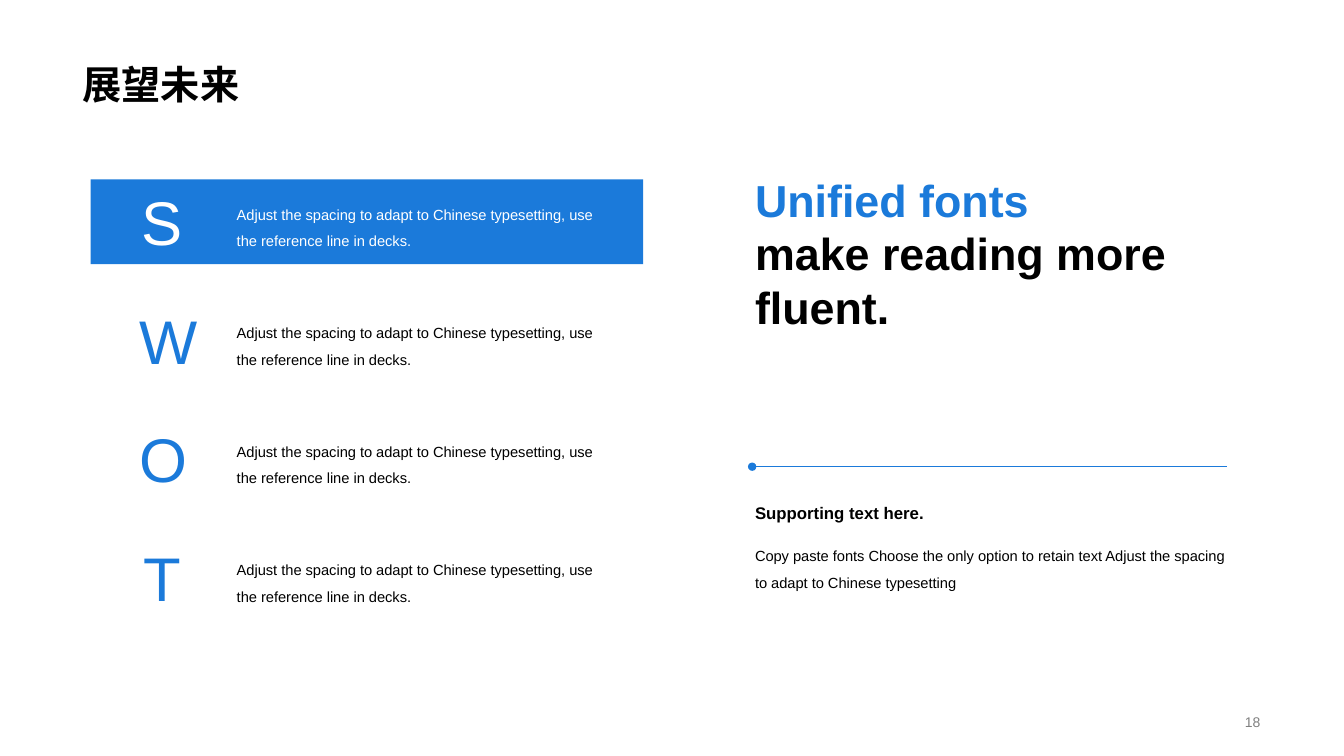
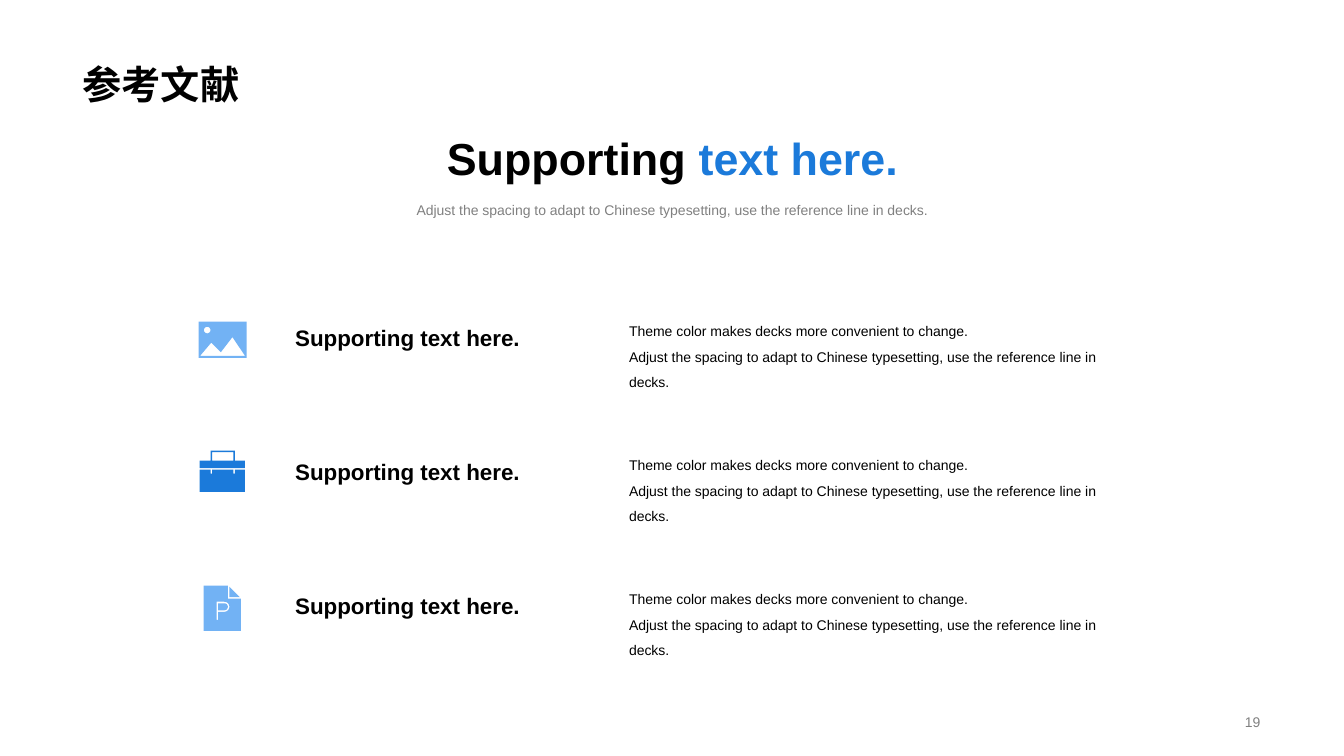
"""Build the outlook and references slides on a grid of tenths of an inch."""

from math import cos, pi, sin

from lxml.etree import SubElement
from pptx import Presentation
from pptx.dml.color import RGBColor
from pptx.enum.shapes import MSO_CONNECTOR, MSO_SHAPE
from pptx.enum.text import MSO_ANCHOR, MSO_AUTO_SIZE, PP_ALIGN
from pptx.oxml.ns import qn
from pptx.util import Inches, Pt

BLUE = RGBColor(0x1B, 0x7A, 0xDA)
SKY = RGBColor(0x72, 0xB2, 0xF4)
BLACK = RGBColor(0x00, 0x00, 0x00)
WHITE = RGBColor(0xFF, 0xFF, 0xFF)
GREY = RGBColor(0x80, 0x80, 0x80)

FONT = "Arial"
GRID = Inches(0.1)
ICON_STEPS = 10

SPACING_TIP = "Adjust the spacing to adapt to Chinese typesetting, use the reference line in decks."
SUPPORT = "Supporting text here."


def cells(*lengths):
    return [round(length * GRID) for length in lengths]


def write(frame, paragraphs, size=10.5, color=BLACK, bold=False,
          align=PP_ALIGN.LEFT, spacing=1.0, anchor=MSO_ANCHOR.TOP):
    frame.word_wrap = True
    frame.auto_size = MSO_AUTO_SIZE.NONE
    frame.vertical_anchor = anchor
    for index, spans in enumerate(paragraphs):
        para = frame.add_paragraph() if index else frame.paragraphs[0]
        para.alignment = align
        para.line_spacing = spacing
        for text, tint in [(spans, color)] if isinstance(spans, str) else spans:
            span = para.add_run()
            span.text = text
            span.font.name = FONT
            span.font.size = Pt(size)
            span.font.bold = bold
            span.font.color.rgb = tint


def arc(x, y, radius, start, end, steps=16):
    angles = [start + (end - start) * step / steps for step in range(steps + 1)]
    return [(x + radius * cos(angle), y + radius * sin(angle)) for angle in angles]


def rectangle(left, top, right, bottom):
    return [(left, top), (right, top), (right, bottom), (left, bottom)]


class Page:
    def __init__(self, deck, title, number):
        self.slide = deck.slides.add_slide(deck.slide_layouts[5])
        self.shapes = self.slide.shapes
        box = self.shapes.title
        box.left, box.top, box.width, box.height = cells(7.2, 0, 118.8, 11.2)
        write(box.text_frame, [title], size=28, bold=True, spacing=0.9,
              anchor=MSO_ANCHOR.BOTTOM)
        self.text(96.9, 70.4, 29.1, 2.4, str(number), size=10, color=GREY,
                  align=PP_ALIGN.RIGHT, anchor=MSO_ANCHOR.MIDDLE)

    def text(self, left, top, width, height, *paragraphs, **style):
        box = self.shapes.add_textbox(*cells(left, top, width, height))
        write(box.text_frame, paragraphs, **style)

    def band(self, left, top, width, height, color):
        box = self.shapes.add_shape(MSO_SHAPE.RECTANGLE, *cells(left, top, width, height))
        self.paint(box, color)

    def rule(self, left, right, top, color):
        line = self.shapes.add_connector(MSO_CONNECTOR.STRAIGHT, *cells(left, top, right, top))
        line.line.color.rgb = color
        line.line.width = Pt(1)
        SubElement(line.line._get_or_add_ln(), qn("a:headEnd"), type="oval")
        SubElement(line._element.spPr, qn("a:effectLst"))

    def icon(self, left, top, color, outlines):
        scaled = [[(x * ICON_STEPS, y * ICON_STEPS) for x, y in outline] for outline in outlines]
        builder = self.shapes.build_freeform(*scaled[0][0], scale=GRID / 10 / ICON_STEPS)
        builder.add_line_segments(scaled[0][1:], close=True)
        for outline in scaled[1:]:
            builder.move_to(*outline[0])
            builder.add_line_segments(outline[1:], close=True)
        self.paint(builder.convert_to_shape(*cells(left, top)), color)

    def paint(self, shape, color):
        shape.shadow.inherit = False
        shape.fill.solid()
        shape.fill.fore_color.rgb = color
        shape.line.fill.background()


PHOTO = [
    rectangle(0, 0, 47.5, 36),
    [(33.5, 15.5), (22, 30.5), (12.5, 21), (1.5, 34), (46, 34)],
    arc(8.5, 8.5, 3.3, 0, 2 * pi),
]
BRIEFCASE = [
    [(0, 19), (11, 19), (11, 23), (12.5, 23), (12.5, 19), (33.5, 19),
     (33.5, 23), (35, 23), (35, 19), (45, 19), (45, 41), (0, 41)],
    [(35, 0), (35, 10), (45, 10), (45, 17.5), (0, 17.5), (0, 10), (11, 10), (11, 0)],
    rectangle(12.5, 1.5, 33.5, 10),
]
DOCUMENT = [
    [(0, 0), (24, 0), (24, 13), (37, 13), (37, 45), (0, 45)],
    [(14.5, 34), (13, 34), (13, 16)] + arc(20.5, 21, 5, -pi / 2, pi / 2) + [(14.5, 26)],
    [(14.5, 24.5), (14.5, 17.5)] + arc(20.5, 21, 3.5, -pi / 2, pi / 2),
    [(36, 11.5), (25.5, 11.5), (25.5, 1)],
]


def add_outlook(deck):
    page = Page(deck, "展望未来", 18)
    page.band(9, 17.8, 54.8, 8.4, BLUE)
    for row, letter in enumerate("SWOT"):
        top = 17.8 + 11.75 * row
        page.text(12.9, top, 6.4, 8.4, letter, size=44, align=PP_ALIGN.CENTER,
                  color=BLUE if row else WHITE)
        page.text(22.5, top + 1.25, 39.3, 6, SPACING_TIP, spacing=1.5,
                  color=BLACK if row else WHITE)
    page.text(73.9, 16.6, 49.6, 17.2, [("Unified fonts", BLUE)],
              "make reading more fluent.", size=32, bold=True)
    page.rule(74.6, 121.7, 46.3, BLUE)
    page.text(73.9, 49.4, 23.2, 3, SUPPORT, size=12, bold=True)
    page.text(73.9, 52.9, 49.6, 6,
              "Copy paste fonts Choose the only option to retain text "
              "Adjust the spacing to adapt to Chinese typesetting", spacing=1.5)


def add_references(deck):
    page = Page(deck, "参考文献", 19)
    page.text(7.3, 12.5, 118.8, 6.4, [("Supporting ", BLACK), ("text here.", BLUE)],
              size=32, bold=True, align=PP_ALIGN.CENTER)
    page.text(7.2, 19, 118.9, 2.7, SPACING_TIP, size=10, color=GREY,
              align=PP_ALIGN.CENTER, spacing=1.3)
    icons = [(19.7, 31.9, SKY, PHOTO), (19.8, 44.7, BLUE, BRIEFCASE), (20.2, 58.1, SKY, DOCUMENT)]
    for row, icon in enumerate(icons):
        top = 30.7 + 13.3 * row
        page.icon(*icon)
        page.text(28.3, top + 1, 26, 3.7, SUPPORT, size=16, bold=True)
        page.text(61.4, top, 52.1, 5.7, "Theme color makes decks more convenient to change.",
                  SPACING_TIP, size=10, spacing=1.5)


def main():
    deck = Presentation()
    deck.slide_width, deck.slide_height = Inches(13.33), Inches(7.5)
    add_outlook(deck)
    add_references(deck)
    deck.save("out.pptx")


if __name__ == "__main__":
    main()
